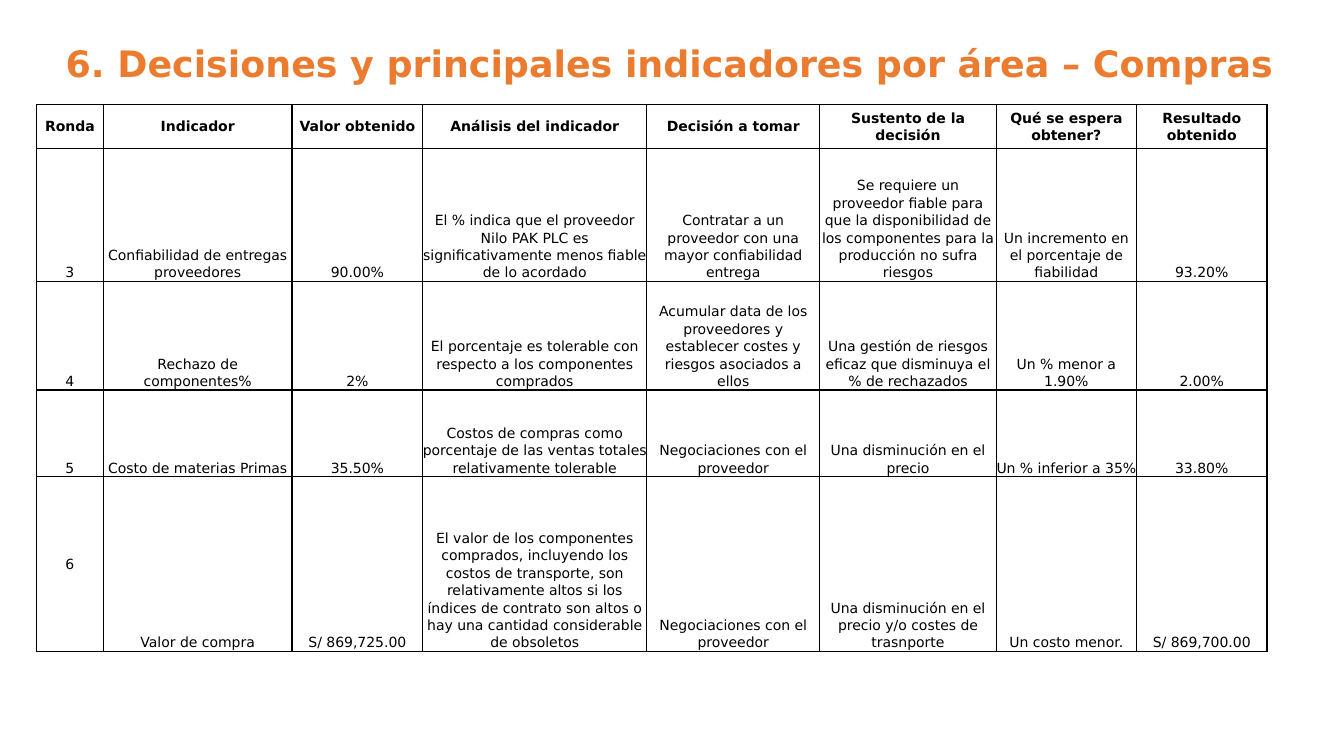
from lxml import etree
from pptx import Presentation
from pptx.dml.color import RGBColor
from pptx.enum import text
from pptx.oxml import ns
from pptx.util import Pt

FONT = "DejaVu Sans"
COLORS = {"title": "EB7B2F", "ink": "000000"}
COLUMN_WIDTHS = [47.7, 134.8, 93.4, 160, 123.6, 126.1, 100.1, 93.4]
ROW_HEIGHTS = [31.2, 95, 77.6, 61.9, 124.8]
HEADINGS = [
    "Ronda", "Indicador", "Valor obtenido", "Análisis del indicador",
    "Decisión a tomar", "Sustento de la decisión", "Qué se espera obtener?",
    "Resultado obtenido",
]
ROUNDS = [
    ["3", "Confiabilidad de entregas proveedores", "90.00%",
     "El % indica que el proveedor Nilo PAK PLC es significativamente menos "
     "fiable de lo acordado",
     "Contratar a un proveedor con una mayor confiabilidad entrega",
     "Se requiere un proveedor fiable para que la disponibilidad de los "
     "componentes para la producción no sufra riesgos",
     "Un incremento en el porcentaje de fiabilidad", "93.20%"],
    ["4", "Rechazo de componentes%", "2%",
     "El porcentaje es tolerable con respecto a los componentes comprados",
     "Acumular data de los proveedores y establecer costes y riesgos "
     "asociados a ellos",
     "Una gestión de riesgos eficaz que disminuya el % de rechazados",
     "Un % menor a 1.90%", "2.00%"],
    ["5", "Costo de materias Primas", "35.50%",
     "Costos de compras como porcentaje de las ventas totales relativamente "
     "tolerable",
     "Negociaciones con el proveedor", "Una disminución en el precio",
     "Un % inferior a 35%", "33.80%"],
    ["6", "Valor de compra", "S/ 869,725.00",
     "El valor de los componentes comprados, incluyendo los costos de "
     "transporte, son relativamente altos si los índices de contrato son "
     "altos o hay una cantidad considerable de obsoletos",
     "Negociaciones con el proveedor",
     "Una disminución en el precio y/o costes de trasnporte",
     "Un costo menor.", "S/ 869,700.00"],
]


def set_font(paragraph, size, color, bold):
    font = paragraph.font
    font.name, font.size, font.bold = FONT, Pt(size), bold
    font.color.rgb = RGBColor.from_string(COLORS[color])


def clear_margins(holder):
    holder.margin_left = holder.margin_right = 0
    holder.margin_top = holder.margin_bottom = 0


def add_title(slide, wording):
    title = slide.shapes.title
    title.left, title.top, title.width, title.height = (
        Pt(46.8), Pt(29.5), Pt(867), Pt(31.7))
    frame = title.text_frame
    clear_margins(frame)
    frame.word_wrap = True
    frame.vertical_anchor = text.MSO_ANCHOR.TOP
    frame.text = wording
    heading = frame.paragraphs[0]
    heading.alignment = text.PP_ALIGN.LEFT
    set_font(heading, 26, "title", True)


def add_borders(cell):
    properties = cell._tc.get_or_add_tcPr()
    for side in ("lnL", "lnR", "lnT", "lnB"):
        line = etree.SubElement(properties, ns.qn(f"a:{side}"), w=str(Pt(1)))
        fill = etree.SubElement(line, ns.qn("a:solidFill"))
        etree.SubElement(fill, ns.qn("a:srgbClr"), val=COLORS["ink"])


def fill_cell(cell, wording, anchor, bold):
    add_borders(cell)
    cell.fill.background()
    clear_margins(cell)
    cell.vertical_anchor = anchor
    cell.text = wording
    entry = cell.text_frame.paragraphs[0]
    entry.alignment = text.PP_ALIGN.CENTER
    entry.line_spacing = 1.07
    entry.space_after = Pt(8)
    set_font(entry, 10, "ink", bold)


def add_indicators(slide):
    rows = [HEADINGS, *ROUNDS]
    indicators = slide.shapes.add_table(
        len(rows), len(HEADINGS), Pt(26.1), Pt(74.8),
        Pt(sum(COLUMN_WIDTHS)), Pt(sum(ROW_HEIGHTS))).table
    indicators.first_row = indicators.horz_banding = False
    for column, width in zip(indicators.columns, COLUMN_WIDTHS):
        column.width = Pt(width)
    for row, height in zip(indicators.rows, ROW_HEIGHTS):
        row.height = Pt(height)
    for r, entries in enumerate(rows):
        for c, wording in enumerate(entries):
            centred = r == 0 or wording == "6"
            anchor = text.MSO_ANCHOR.MIDDLE if centred else text.MSO_ANCHOR.BOTTOM
            fill_cell(indicators.cell(r, c), wording, anchor, r == 0)


def main():
    deck = Presentation()
    deck.slide_width, deck.slide_height = Pt(960), Pt(540)
    slide = deck.slides.add_slide(deck.slide_layouts.get_by_name("Title Only"))
    add_title(slide, "6. Decisiones y principales indicadores por área – Compras")
    add_indicators(slide)
    deck.save("out.pptx")


if __name__ == "__main__":
    main()
